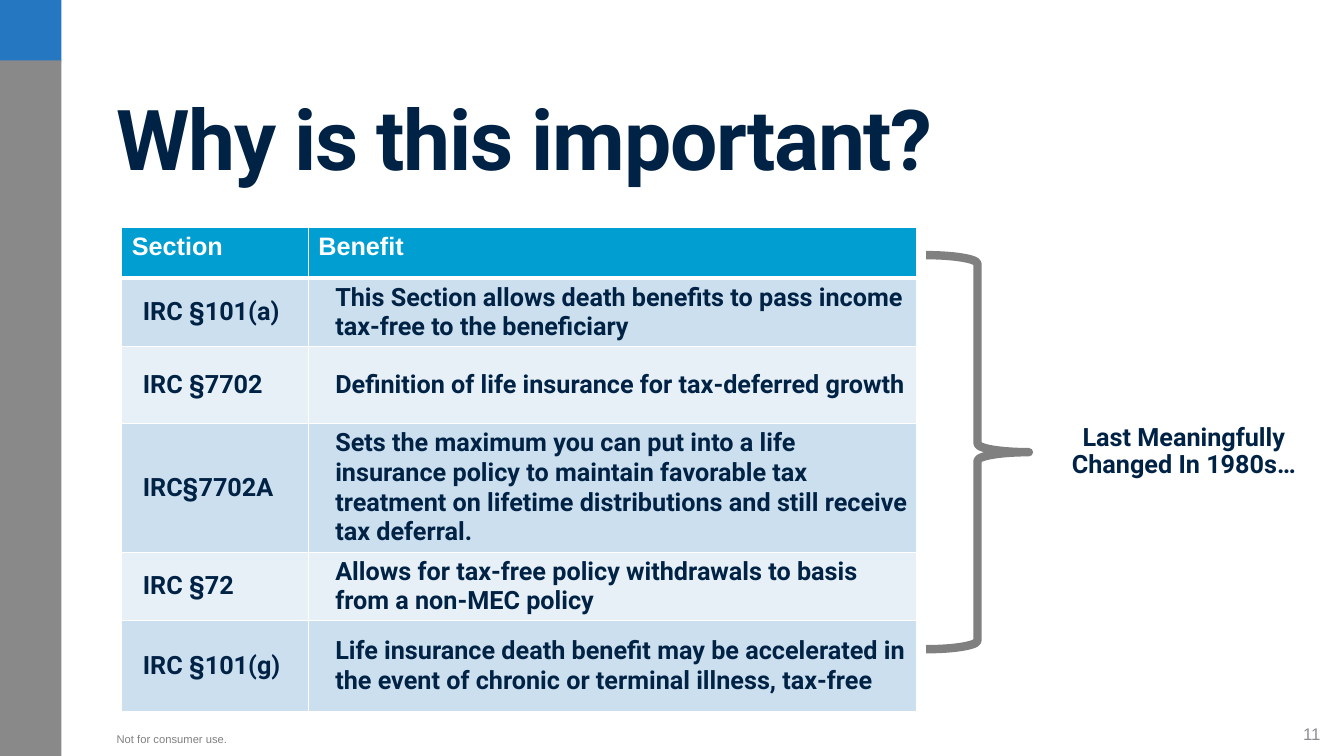
from lxml import etree
from pptx import Presentation
from pptx.dml.color import RGBColor
from pptx.enum.shapes import MSO_SHAPE
from pptx.enum.text import MSO_ANCHOR, PP_ALIGN
from pptx.oxml.ns import qn
from pptx.util import Cm, Pt

HEADER = ("Section", "Benefit")
BENEFITS = [
    ("IRC §101(a)", "This Section allows death benefits to pass income tax-free to the beneficiary"),
    ("IRC §7702", "Definition of life insurance for tax-deferred growth"),
    ("IRC§7702A", "Sets the maximum you can put into a life insurance policy to maintain "
                  "favorable tax treatment on lifetime distributions and still receive tax deferral."),
    ("IRC §72", "Allows for tax-free policy withdrawals to basis from a non-MEC policy"),
    ("IRC §101(g)", "Life insurance death benefit may be accelerated in the event of chronic "
                    "or terminal illness, tax-free"),
]
COLUMN_WIDTHS = (4.7, 15.32)
ROW_HEIGHTS = (1.27, 1.7, 1.93, 2.29, 1.7, 2.29)
COLUMN_INDENTS = (0.33, 0.48)

WHITE = RGBColor(0xFF, 0xFF, 0xFF)
NAVY = RGBColor(0x00, 0x22, 0x45)
BLUE = RGBColor(0x26, 0x77, 0xC2)
SIDE_GRAY = RGBColor(0x89, 0x89, 0x89)
GRAY = RGBColor(0x80, 0x80, 0x80)
NUMBER_GRAY = RGBColor(0x8C, 0x8D, 0x94)
HEADER_BLUE = RGBColor(0x00, 0x9E, 0xD1)
BANDS = (RGBColor(0xCC, 0xDF, 0xEE), RGBColor(0xE7, 0xF0, 0xF7))

MIDDLE = MSO_ANCHOR.MIDDLE
LEFT, CENTER, RIGHT = PP_ALIGN.LEFT, PP_ALIGN.CENTER, PP_ALIGN.RIGHT


def style(run, font_name, size, color, bold):
    run.font.name = font_name
    run.font.size = Pt(size)
    run.font.color.rgb = color
    run.font.bold = bold


def add_text(slide, box, text, font_name, size, color, bold=False, align=LEFT, line_spacing=1.0):
    shape = slide.shapes.add_textbox(*map(Cm, box))
    frame = shape.text_frame
    frame.word_wrap = True
    frame.vertical_anchor = MIDDLE
    frame.text = text
    paragraph = frame.paragraphs[0]
    paragraph.alignment = align
    paragraph.line_spacing = line_spacing
    style(paragraph.runs[0], font_name, size, color, bold)
    return paragraph.runs[0]


def add_bar(slide, top, height, color):
    bar = slide.shapes.add_shape(MSO_SHAPE.RECTANGLE, 0, Cm(top), Cm(1.55), Cm(height))
    bar.shadow.inherit = False
    bar.fill.solid()
    bar.fill.fore_color.rgb = color
    bar.line.fill.background()


def set_borders(cell, widths):
    """Draw white borders; widths maps a side (L, R, T, B) to points."""
    properties = cell._tc.get_or_add_tcPr()
    for position, (side, width) in enumerate(widths.items()):
        line = etree.Element(qn(f"a:ln{side}"), w=str(Pt(width)))
        fill = etree.SubElement(line, qn("a:solidFill"))
        etree.SubElement(fill, qn("a:srgbClr"), val=str(WHITE))
        properties.insert(position, line)


def add_benefit_table(slide):
    rows = [HEADER] + BENEFITS
    frame = slide.shapes.add_table(len(rows), len(HEADER), Cm(3.07), Cm(5.74),
                                   Cm(sum(COLUMN_WIDTHS)), Cm(sum(ROW_HEIGHTS)))
    table = frame.table
    for column, width in zip(table.columns, COLUMN_WIDTHS):
        column.width = Cm(width)
    for row_index, (texts, height) in enumerate(zip(rows, ROW_HEIGHTS)):
        table.rows[row_index].height = Cm(height)
        is_header = row_index == 0
        for column_index, text in enumerate(texts):
            cell = table.cell(row_index, column_index)
            cell.text = text
            paragraph = cell.text_frame.paragraphs[0]
            cell.fill.solid()
            if is_header:
                cell.fill.fore_color.rgb = HEADER_BLUE
                style(paragraph.runs[0], "Arial", 18, WHITE, True)
            else:
                cell.fill.fore_color.rgb = BANDS[(row_index - 1) % 2]
                cell.vertical_anchor = MIDDLE
                cell.margin_left = cell.margin_right = Cm(0.2)
                cell.margin_top = cell.margin_bottom = Cm(0.1)
                indent = paragraph._p.get_or_add_pPr()
                indent.set("marL", str(Cm(COLUMN_INDENTS[column_index])))
                indent.set("indent", "0")
                style(paragraph.runs[0], "Roboto", 18, NAVY, True)
            set_borders(cell, {"L": 1, "R": 1, "T": 3 if row_index == 1 else 1,
                               "B": 3 if is_header else 1})


def add_brace(slide):
    brace = slide.shapes.add_shape(MSO_SHAPE.RIGHT_BRACE, Cm(23.34), Cm(6.43), Cm(2.59), Cm(9.93))
    brace.shadow.inherit = False
    brace.fill.background()
    brace.line.color.rgb = GRAY
    brace.line.width = Pt(6)


def main():
    presentation = Presentation()
    presentation.slide_width = Cm(33.87)
    presentation.slide_height = Cm(19.05)
    slide = presentation.slides.add_slide(presentation.slide_layouts[6])

    add_bar(slide, 0, 1.55, BLUE)
    add_bar(slide, 1.52, 17.53, SIDE_GRAY)
    title = add_text(slide, (2.69, 2.41, 29.21, 2.57), "Why is this important?",
                     "Roboto", 60, NAVY, bold=True, line_spacing=0.8)
    title.font._element.set("spc", "-100")
    add_benefit_table(slide)
    add_text(slide, (26.19, 10.49, 7.29, 1.8), "Last Meaningfully Changed In 1980s…",
             "Roboto", 18, NAVY, bold=True, align=CENTER, line_spacing=0.9)
    add_brace(slide)
    add_text(slide, (2.69, 18.31, 24.77, 0.64), "Not for consumer use.", "Arial", 8, GRAY)
    add_text(slide, (31.04, 17.98, 2.49, 1.02), "11", "Arial", 12, NUMBER_GRAY, align=RIGHT)
    presentation.save("out.pptx")


if __name__ == "__main__":
    main()
